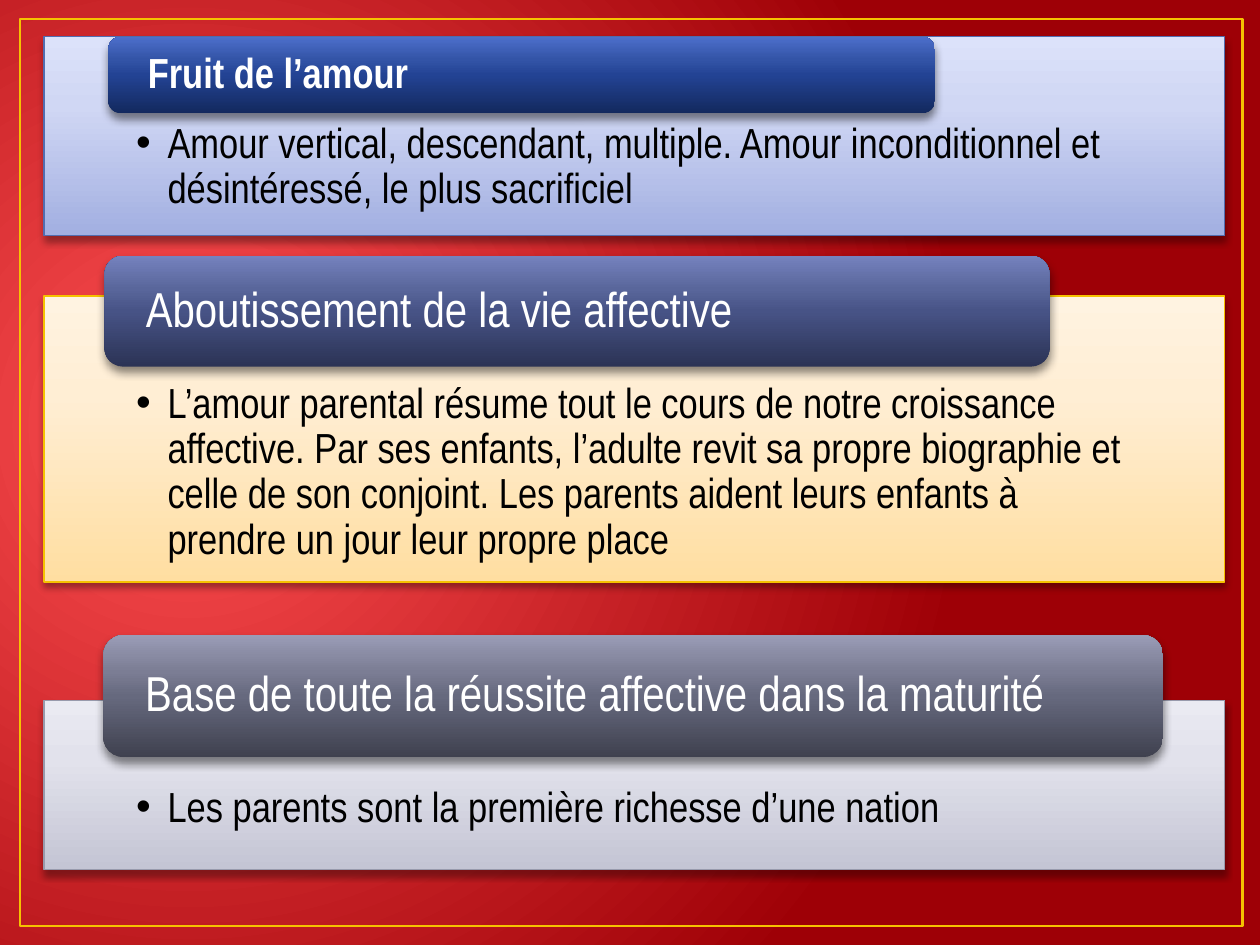
"""Build a slide of three titled panels about parental love."""
from dataclasses import dataclass

from lxml import etree
from pptx import Presentation
from pptx.dml.color import RGBColor
from pptx.enum.shapes import MSO_SHAPE
from pptx.enum.text import MSO_ANCHOR, PP_ALIGN
from pptx.oxml import parse_xml
from pptx.oxml.ns import nsdecls, qn
from pptx.util import Pt

RECT, ROUNDED = MSO_SHAPE.RECTANGLE, MSO_SHAPE.ROUNDED_RECTANGLE
TOP, MIDDLE = MSO_ANCHOR.TOP, MSO_ANCHOR.MIDDLE
LEFT = PP_ALIGN.LEFT
UPWARD = '<a:lin ang="16200000" scaled="0"/>'
RADIAL = '<a:path path="circle"><a:fillToRect l="15000" t="50000" r="85000" b="60000"/></a:path>'


@dataclass(frozen=True)
class Theme:
    font: str = "Arial Narrow"
    body_size: float = 24
    body: str = "000000"
    heading: str = "FFFFFF"
    frame: str = "F5C201"
    shadow: str = "000000"
    background: tuple[str, ...] = ("FF5052", "9E0006")
    panel_stops: tuple[int, ...] = (0, 65, 100)
    tab_stops: tuple[int, ...] = (0, 50, 70, 100)


@dataclass(frozen=True)
class Box:
    left: float
    top: float
    width: float
    height: float


@dataclass(frozen=True)
class Section:
    heading: str
    heading_size: float
    bold: bool
    tab: Box
    tab_colors: tuple[str, ...]
    body: str
    panel: Box
    panel_colors: tuple[str, ...]
    line: str


THEME = Theme()
FRAME = Box(11.52, 10.8, 698.4, 518.4)
PANEL_LEFT, PANEL_WIDTH = 25.2, 674.64
SECTIONS = (
    Section("Fruit de l’amour", 24, True, Box(61.92, 20.88, 472.32, 43.92),
            ("13295E", "234394", "3354A7", "4D6FCB"),
            "Amour vertical, descendant, multiple. Amour inconditionnel et "
            "désintéressé, le plus sacrificiel",
            Box(PANEL_LEFT, 20.88, PANEL_WIDTH, 113.76),
            ("A2AFE1", "D0D7F4", "DCE2FA"), "526DB0"),
    Section("Aboutissement de la vie affective", 28, False, Box(59.76, 146.16, 540, 63.36),
            ("2B3355", "475386", "59669B", "7582BE"),
            "L’amour parental résume tout le cours de notre croissance affective. "
            "Par ses enfants, l’adulte revit sa propre biographie et celle de son conjoint. "
            "Les parents aident leurs enfants à prendre un jour leur propre place",
            Box(PANEL_LEFT, 169.2, PANEL_WIDTH, 163.44),
            ("FFDEA1", "FFEED4", "FFF3E1"), "F5C201"),
    Section("Base de toute la réussite affective dans la maturité", 28, False,
            Box(59.04, 362.88, 605.52, 69.84),
            ("3F414F", "66697E", "7B7D94", "9A9CB6"),
            "Les parents sont la première richesse d’une nation",
            Box(PANEL_LEFT, 400.32, PANEL_WIDTH, 96.48),
            ("C4C5D4", "E2E2EC", "EAEAF2"), "989AAC"),
)


def apply(target, values: dict) -> None:
    for name, value in values.items():
        setattr(target, name, value)


def set_gradient(fill, parent, positions: tuple, colors: tuple, direction: str) -> None:
    fill.gradient()
    stops = "".join(f'<a:gs pos="{pos * 1000}"><a:srgbClr val="{color}"/></a:gs>'
                    for pos, color in zip(positions, colors))
    gradient = parse_xml(f'<a:gradFill {nsdecls("a")} rotWithShape="1">'
                         f'<a:gsLst>{stops}</a:gsLst>{direction}</a:gradFill>')
    parent.replace(parent.find(qn("a:gradFill")), gradient)


def add_box(s, kind, box: Box, line: str | None = None, line_width: float = 0.75):
    sp = s.shapes.add_shape(kind, Pt(box.left), Pt(box.top), Pt(box.width), Pt(box.height))
    sp.shadow.inherit = False
    sp.fill.background()
    if line:
        sp.line.color.rgb = RGBColor.from_string(line)
        sp.line.width = Pt(line_width)
    else:
        sp.line.fill.background()
    return sp


def add_shadow(sp, opacity: int, blur: float) -> None:
    effects = sp.element.spPr.find(qn("a:effectLst"))
    shadow = etree.SubElement(effects, qn("a:outerShdw"), blurRad=str(Pt(blur)),
                              dist=str(Pt(3)), dir="5400000", rotWithShape="0")
    color = etree.SubElement(shadow, qn("a:srgbClr"), val=THEME.shadow)
    etree.SubElement(color, qn("a:alpha"), val=str(opacity * 1000))


def add_text(sp, text: str, size: float, color: str, bold: bool, anchor, insets: tuple):
    tf = sp.text_frame
    left, top, right, bottom = map(Pt, insets)
    apply(tf, {"word_wrap": True, "vertical_anchor": anchor, "margin_left": left,
               "margin_top": top, "margin_right": right, "margin_bottom": bottom})
    p = tf.paragraphs[0]
    apply(p, {"alignment": LEFT, "line_spacing": 0.9})
    r = p.add_run()
    r.text = text
    apply(r.font, {"name": THEME.font, "size": Pt(size), "bold": bold})
    r.font.color.rgb = RGBColor.from_string(color)
    return p


def add_bullet(p) -> None:
    p.level = 1
    pPr = p._p.get_or_add_pPr()
    pPr.set("marL", str(Pt(18)))
    pPr.set("indent", str(-Pt(18)))
    etree.SubElement(pPr, qn("a:buFont"), typeface="Arial")
    etree.SubElement(pPr, qn("a:buChar"), char="•")


def add_section(s, section: Section) -> None:
    panel = add_box(s, RECT, section.panel, section.line)
    set_gradient(panel.fill, panel.element.spPr, THEME.panel_stops, section.panel_colors, UPWARD)
    add_shadow(panel, 35, 4)
    add_bullet(add_text(panel, section.body, THEME.body_size, THEME.body, False, TOP,
                        (52.56, 48.96, 52.56, 13.68)))
    tab = add_box(s, ROUNDED, section.tab)
    set_gradient(tab.fill, tab.element.spPr, THEME.tab_stops, section.tab_colors, UPWARD)
    add_shadow(tab, 45, 5)
    add_text(tab, section.heading, section.heading_size, THEME.heading, section.bold, MIDDLE,
             (20.5, 0, 20.5, 0))


def main() -> None:
    prs = Presentation()
    prs.slide_width, prs.slide_height = Pt(720), Pt(540)
    s = prs.slides.add_slide(prs.slide_layouts[6])
    fill = s.background.fill
    fill.solid()
    set_gradient(fill, s.element.find(".//" + qn("p:bgPr")), (0, 100), THEME.background, RADIAL)
    add_box(s, RECT, FRAME, THEME.frame, 1.5)
    for section in SECTIONS:
        add_section(s, section)
    prs.save("out.pptx")


if __name__ == "__main__":
    main()
